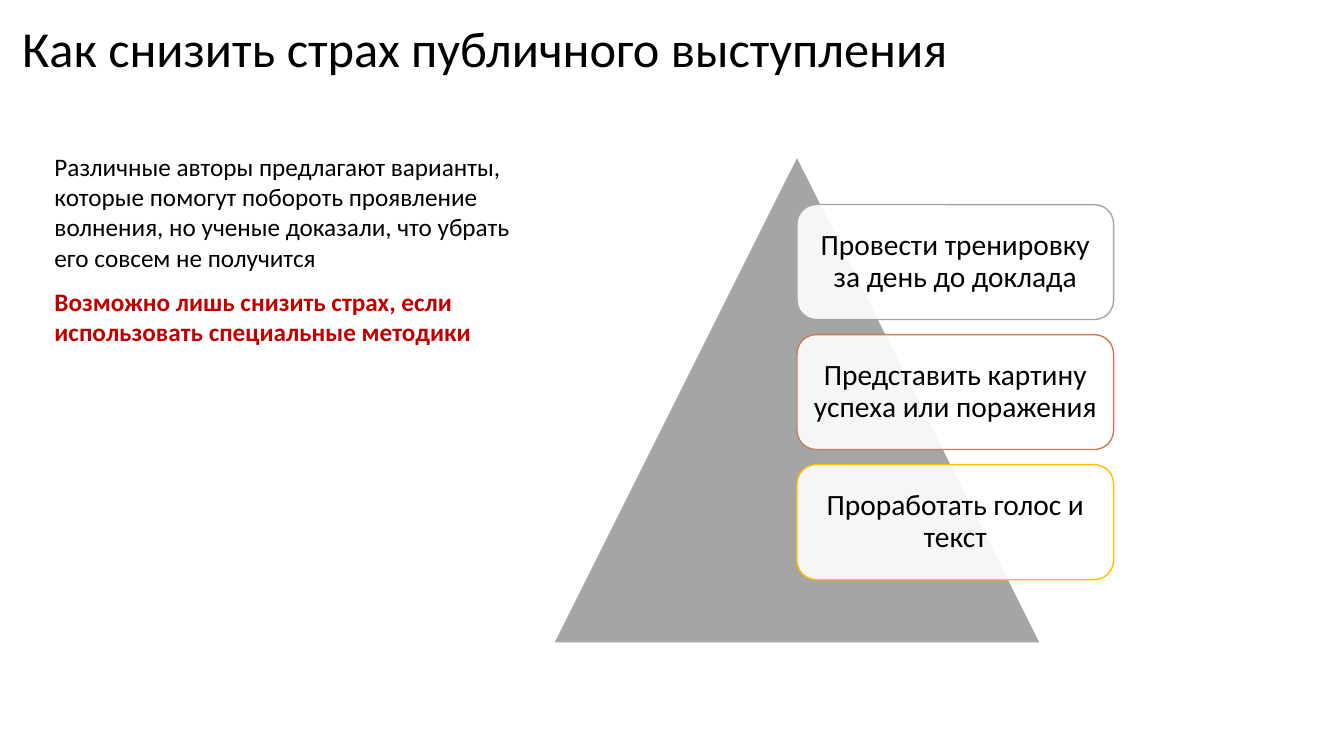
import pptx
import pptx.util
import pptx.dml.color
import pptx.enum.shapes
import pptx.enum.text
import pptx.oxml.ns
import lxml.etree

Inches, Pt = pptx.util.Inches, pptx.util.Pt
RGBColor = pptx.dml.color.RGBColor
PP_ALIGN, MSO_ANCHOR = pptx.enum.text.PP_ALIGN, pptx.enum.text.MSO_ANCHOR
MSO_SHAPE = pptx.enum.shapes.MSO_SHAPE
qn = pptx.oxml.ns.qn

BLACK = RGBColor(0x00, 0x00, 0x00)
WHITE = RGBColor(0xFF, 0xFF, 0xFF)
RED = RGBColor(0xC0, 0x00, 0x00)
GREY = RGBColor(0xA5, 0xA5, 0xA5)
COPPER = RGBColor(0xC9, 0x7D, 0x55)
GOLD = RGBColor(0xFF, 0xC0, 0x00)


def apply(target, values):
    for name, value in values.items():
        setattr(target, name, value)


def place(part, left, top, width, height):
    apply(part, {"left": Inches(left), "top": Inches(top),
                 "width": Inches(width), "height": Inches(height)})


deck = pptx.Presentation()
apply(deck, {"slide_width": Inches(13.33), "slide_height": Inches(7.5)})
slide = deck.slides.add_slide(deck.slide_layouts[1])

# Title
heading = slide.shapes.title
place(heading, 0.12, -0.22, 11.5, 1.45)
heading.text_frame.text = "Как снизить страх публичного выступления"
apply(heading.text_frame, {"auto_size": pptx.enum.text.MSO_AUTO_SIZE.NONE,
                           "vertical_anchor": MSO_ANCHOR.MIDDLE})
heading_line = heading.text_frame.paragraphs[0]
apply(heading_line, {"alignment": PP_ALIGN.LEFT, "line_spacing": 0.9})
apply(heading_line.font, {"name": "Calibri", "size": Pt(36)})
heading_line.font.color.rgb = BLACK

# Introduction and its conclusion
intro = slide.placeholders[1]
place(intro, 0.44, 1.45, 4.86, 2.45)
intro.text_frame.auto_size = pptx.enum.text.MSO_AUTO_SIZE.NONE
statements = [
    ("Различные авторы предлагают варианты, которые помогут побороть проявление "
     "волнения, но ученые доказали, что убрать его совсем не получится", BLACK, False, 0),
    ("Возможно лишь снизить страх, если использовать специальные методики", RED, True, 10),
]
intro.text_frame.text = "\n".join(statement[0] for statement in statements)
for paragraph, (_, color, bold, gap) in zip(intro.text_frame.paragraphs, statements):
    properties = paragraph._p.get_or_add_pPr()
    properties.set("marL", "0")
    properties.set("indent", "0")
    lxml.etree.SubElement(properties, qn("a:buNone"))
    apply(paragraph, {"space_before": Pt(gap), "line_spacing": 1.0})
    apply(paragraph.font, {"name": "Calibri", "size": Pt(18), "bold": bold})
    paragraph.font.color.rgb = color

# Pyramid
PYRAMID_LEFT, PYRAMID_TOP, PYRAMID_SIZE = 5.49, 1.55, 4.83
pyramid = slide.shapes.add_shape(
    MSO_SHAPE.ISOSCELES_TRIANGLE, Inches(PYRAMID_LEFT), Inches(PYRAMID_TOP),
    Inches(PYRAMID_SIZE), Inches(PYRAMID_SIZE))
pyramid.shadow.inherit = False
pyramid.fill.solid()
pyramid.fill.fore_color.rgb = GREY
pyramid.line.color.rgb = WHITE
pyramid.line.width = Pt(1)

# Translucent method cards, starting at the pyramid's axis
CARD_LEFT = PYRAMID_LEFT + PYRAMID_SIZE / 2
CARD_TOP, CARD_WIDTH, CARD_HEIGHT, CARD_PITCH = 2.03, 3.14, 1.14, 1.29
methods = [
    ("Провести тренировку за день до доклада", GREY),
    ("Представить картину успеха или поражения", COPPER),
    ("Проработать голос и текст", GOLD),
]
for row, (method, outline) in enumerate(methods):
    card = slide.shapes.add_shape(
        MSO_SHAPE.ROUNDED_RECTANGLE, Inches(CARD_LEFT),
        Inches(CARD_TOP + row * CARD_PITCH), Inches(CARD_WIDTH), Inches(CARD_HEIGHT))
    card.shadow.inherit = False
    card.fill.solid()
    card.fill.fore_color.rgb = WHITE
    white = card.fill._xPr.find(qn("a:solidFill"))[0]
    lxml.etree.SubElement(white, qn("a:alpha")).set("val", "90000")
    card.line.color.rgb = outline
    card.line.width = Pt(1)
    apply(card.text_frame, {
        "text": method, "word_wrap": True, "vertical_anchor": MSO_ANCHOR.MIDDLE,
        "margin_left": Inches(0.09), "margin_right": Inches(0.09),
        "margin_top": Inches(0.09), "margin_bottom": Inches(0.09)})
    label = card.text_frame.paragraphs[0]
    apply(label, {"alignment": PP_ALIGN.CENTER, "line_spacing": 0.9})
    apply(label.font, {"name": "Calibri", "size": Pt(21)})
    label.font.color.rgb = BLACK

deck.save("out.pptx")
